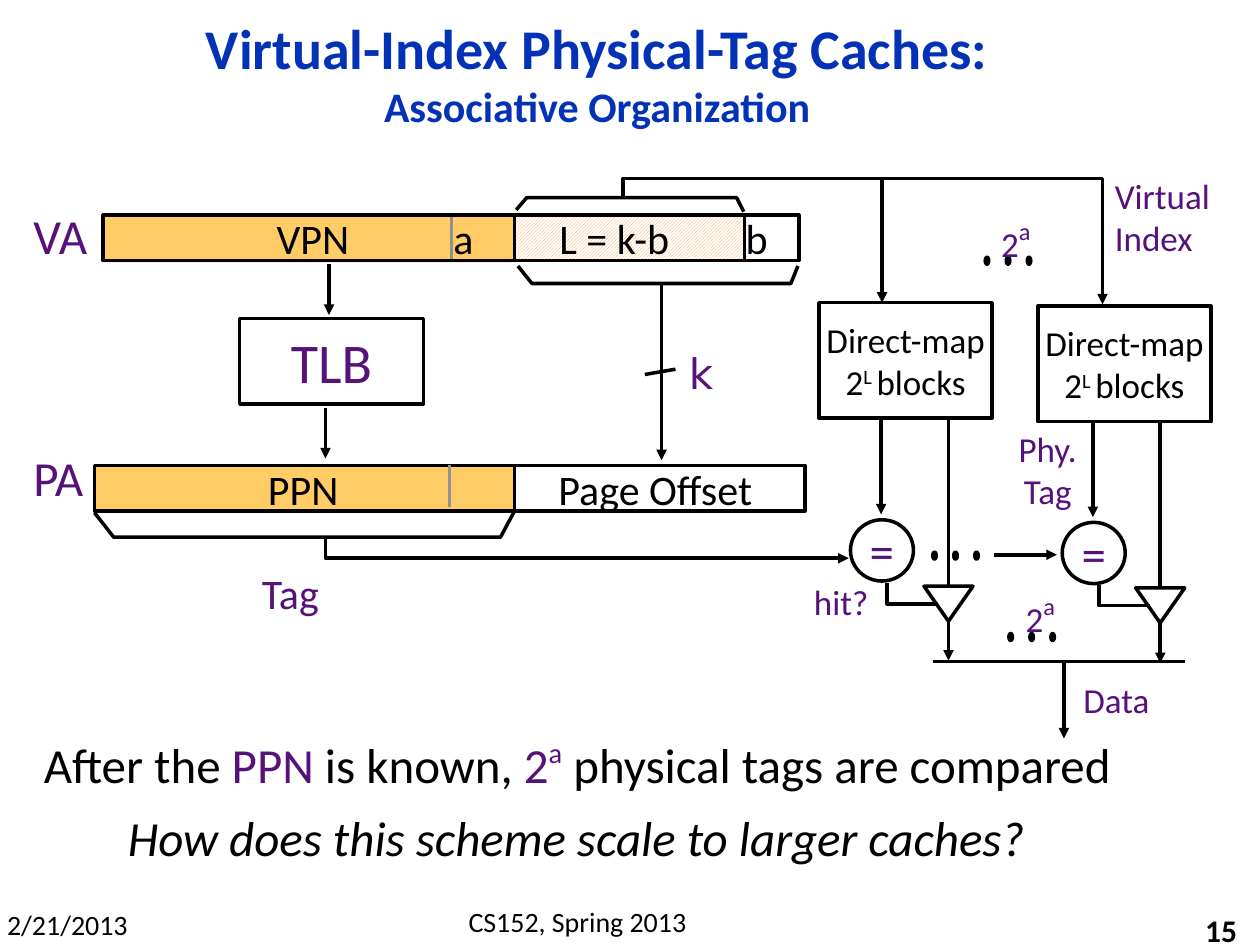
from lxml import etree
from pptx import Presentation
from pptx.dml.color import RGBColor
from pptx.enum.dml import MSO_PATTERN
from pptx.enum.shapes import MSO_CONNECTOR, MSO_SHAPE
from pptx.enum.text import MSO_ANCHOR, MSO_AUTO_SIZE, PP_ALIGN
from pptx.oxml.ns import qn
from pptx.util import Pt

RECTANGLE, OVAL = MSO_SHAPE.RECTANGLE, MSO_SHAPE.OVAL
STRAIGHT = MSO_CONNECTOR.STRAIGHT
HATCH = MSO_PATTERN.DARK_UPWARD_DIAGONAL
LEFT, CENTER, RIGHT = PP_ALIGN.LEFT, PP_ALIGN.CENTER, PP_ALIGN.RIGHT
MIDDLE = MSO_ANCHOR.MIDDLE
NO_AUTOFIT = MSO_AUTO_SIZE.NONE
BLACK, WHITE, GRAY = "000000", "FFFFFF", "919191"
PURPLE, BLUE, ORANGE = "56127A", "0332B7", "FFCC66"


def paint(fill, color, back=None):
    if back:
        fill.patterned()
        fill.pattern = HATCH
        fill.back_color.rgb = RGBColor.from_string(back)
    else:
        fill.solid()
    fill.fore_color.rgb = RGBColor.from_string(color)


def write(frame, text, size=20, color=PURPLE, font="Calibri", bold=False,
          italic=False, baseline=0, align=LEFT):
    for index, line in enumerate(text.split("\n")):
        paragraph = frame.add_paragraph() if index else frame.paragraphs[-1]
        paragraph.alignment = align
        if not line:
            continue
        run = paragraph.add_run()
        run.text = line
        run.font.size = Pt(size)
        run.font.name = font
        run.font.bold = bold
        run.font.italic = italic
        paint(run.font.fill, color)
        if baseline:
            run._r.get_or_add_rPr().set("baseline", str(baseline * 1000))


presentation = Presentation()
presentation.slide_width = Pt(720)
presentation.slide_height = Pt(540)
slide = presentation.slides.add_slide(presentation.slide_layouts[5])
shapes = slide.shapes

title = shapes.title
title.left, title.top, title.width, title.height = Pt(54), Pt(12), Pt(574.5), Pt(58.5)
title.text_frame.auto_size = NO_AUTOFIT
title.text_frame.vertical_anchor = MIDDLE
write(title.text_frame, "Virtual-Index Physical-Tag Caches:", size=32, color=BLUE, bold=True, align=CENTER)
write(title.text_frame, "\nAssociative Organization", size=24, color=BLUE, bold=True, align=CENTER)

for left, top, width, height, color, back in [
    (58, 123, 236, 27, ORANGE, None),
    (294, 123, 133, 26, "FFA74F", WHITE),
    (53.5, 266, 240, 27, ORANGE, None),
]:
    field = shapes.add_shape(RECTANGLE, Pt(left), Pt(top), Pt(width), Pt(height))
    field.shadow.inherit = False
    field.line.fill.background()
    paint(field.fill, color, back)

for left, top, width, text, stops in [
    (59, 123, 397.5, "\tVPN\ta\tL = k-b\tb", (92, 193, 253.5, 360)),
    (54, 266, 406, "\tPPN\tPage Offset", (92, 258)),
]:
    address = shapes.add_shape(RECTANGLE, Pt(left), Pt(top), Pt(width), Pt(26))
    address.shadow.inherit = False
    address.fill.background()
    paint(address.line.fill, BLACK)
    address.line.width = Pt(2)
    write(address.text_frame, text, size=24, color=BLACK)
    properties = address.text_frame.paragraphs[0]._p.get_or_add_pPr()
    tabs = etree.SubElement(properties, qn("a:tabLst"))
    for stop in stops:
        etree.SubElement(tabs, qn("a:tab"), pos=str(Pt(stop)), algn="l")

routes = [
    ([(425.5, 123), (425.5, 148)], BLACK, False),
    ([(294, 124), (294, 149)], BLACK, False),
    ([(294, 267), (294, 292)], BLACK, False),
    ([(257, 266), (257, 290)], GRAY, False),
    ([(258, 124), (258, 148)], GRAY, False),
    ([(188, 151), (188, 180)], BLACK, True),
    ([(186, 233), (186, 262)], BLACK, True),
    ([(378, 162), (378, 263)], BLACK, True),
    ([(386, 211), (368.5, 214)], BLACK, False),
    ([(568, 317), (604, 317)], BLACK, True),
    ([(608, 379), (608, 422)], BLACK, True),
    ([(533, 378), (677, 378)], BLACK, False),
    ([(295, 120.5), (301, 113), (421, 113), (425, 121)], BLACK, False),
    ([(296, 152.5), (304, 162), (451.5, 162), (456, 152)], BLACK, False),
    ([(54, 293), (65, 307), (286.5, 307), (294, 292)], BLACK, False),
    ([(186, 308), (186, 319), (485, 319)], BLACK, True),
    ([(355.5, 112), (355.5, 102), (504, 102), (504, 173)], BLACK, True),
    ([(504, 102), (630, 102), (630, 174)], BLACK, True),
]
boxes = [(RECTANGLE, 137, 182, 105, 49, [("TLB", {"size": 32})])]
block_text = [("Direct-map\n2", {"color": BLACK}),
              ("L ", {"color": BLACK, "baseline": 30}),
              ("blocks", {"color": BLACK})]
for block_left, block_top, across, down in [(468, 173, 0, 0), (593, 175, 121, 1.5)]:
    boxes += [
        (RECTANGLE, block_left, block_top, 99, 66, block_text),
        (OVAL, 486 + across, 297 + down, 36, 35, [("=", {"size": 28})]),
    ]
    for points, arrow in [
        ([(503.5, 239), (503.5, 294)], True),
        ([(542, 239), (542, 377.5)], True),
        ([(528, 335), (556, 335), (542, 355), (528, 335)], False),
        ([(507, 333), (507, 345), (536, 345)], False),
    ]:
        routes.append(([(x + across, y + down) for x, y in points], BLACK, arrow))

for points, color, arrow in routes:
    if len(points) == 2:
        start, end = points
        route = shapes.add_connector(STRAIGHT, Pt(start[0]), Pt(start[1]), Pt(end[0]), Pt(end[1]))
    else:
        closed = points[0] == points[-1]
        builder = shapes.build_freeform(*points[0], scale=Pt(1))
        builder.add_line_segments(points[1:], close=closed)
        route = builder.convert_to_shape()
        if closed:
            paint(route.fill, WHITE)
        else:
            route.fill.background()
    paint(route.line.fill, color)
    route.line.width = Pt(2)
    outline = route.element.spPr.find(qn("a:ln"))
    if arrow:
        etree.SubElement(outline, qn("a:tailEnd"), type="triangle")
    etree.SubElement(route.element.spPr, qn("a:effectLst"))

for kind, left, top, width, height, runs in boxes:
    box = shapes.add_shape(kind, Pt(left), Pt(top), Pt(width), Pt(height))
    box.shadow.inherit = False
    if kind == OVAL:
        paint(box.fill, WHITE)
    else:
        box.fill.background()
    paint(box.line.fill, BLACK)
    box.line.width = Pt(2)
    box.text_frame.word_wrap = False
    for text, style in runs:
        write(box.text_frame, text, align=CENTER, **style)

for first_left, top in [(563, 147), (576.5, 362), (533, 315.5)]:
    for index in range(3):
        dot = shapes.add_shape(OVAL, Pt(first_left + 12 * index), Pt(top), Pt(2), Pt(4))
        dot.shadow.inherit = False
        paint(dot.fill, BLACK)
        paint(dot.line.fill, BLACK)
        dot.line.width = Pt(2)

ways = [("2", {}), ("a", {"size": 24, "baseline": 40})]
statement = {"size": 28, "color": BLACK}
emphasis = {"size": 28}
footer = {"size": 16, "color": BLACK, "align": CENTER}
for left, top, width, height, runs in [
    (458, 328, 46, 31, [("hit?", {})]),
    (612, 384, 52.5, 31, [("Data", {})]),
    (574, 240.5, 49.5, 55.5, [("Phy.\nTag", {"align": CENTER})]),
    (142.5, 321, 49, 36, [("Tag", {"size": 24})]),
    (12, 114, 47, 41, [("VA", emphasis)]),
    (12, 252, 45, 41, [("PA", emphasis)]),
    (630, 96, 69, 55.5, [("Virtual\nIndex", {})]),
    (386.5, 195, 29, 36, [("k", {"size": 24, "font": "DejaVu Sans"})]),
    (565, 119.5, 32.5, 31, ways),
    (579, 334, 32.5, 31, ways),
    (18, 416, 634.5, 41, [
        ("After the", statement), (" PPN ", emphasis), ("is known, ", statement),
        ("2", emphasis), ("a", {"size": 28, "baseline": 40}),
        (" physical tags are compared", statement)]),
    (66, 458, 570, 41, [("How does this scheme scale to larger caches?", {**statement, "italic": True})]),
    (-3.5, 515, 84, 26.5, [("2/21/2013", footer)]),
    (210, 513.5, 240, 26.5, [("CS152, Spring 2013", footer)]),
    (564, 517, 150, 23, [("15", {"size": 18, "color": BLACK, "bold": True, "align": RIGHT})]),
]:
    label = shapes.add_textbox(Pt(left), Pt(top), Pt(width), Pt(height))
    label.text_frame.word_wrap = False
    for text, style in runs:
        write(label.text_frame, text, **style)

presentation.save("out.pptx")
